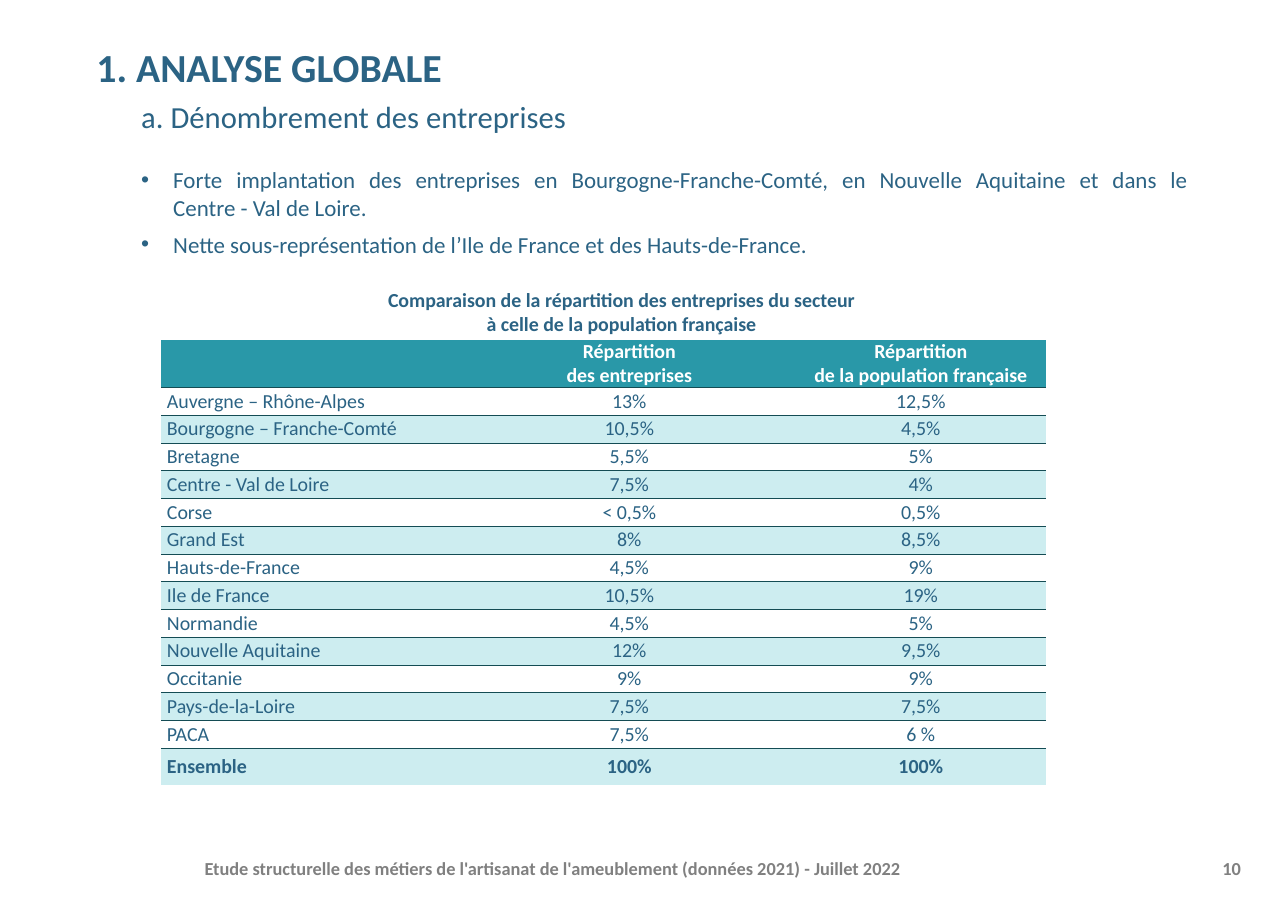
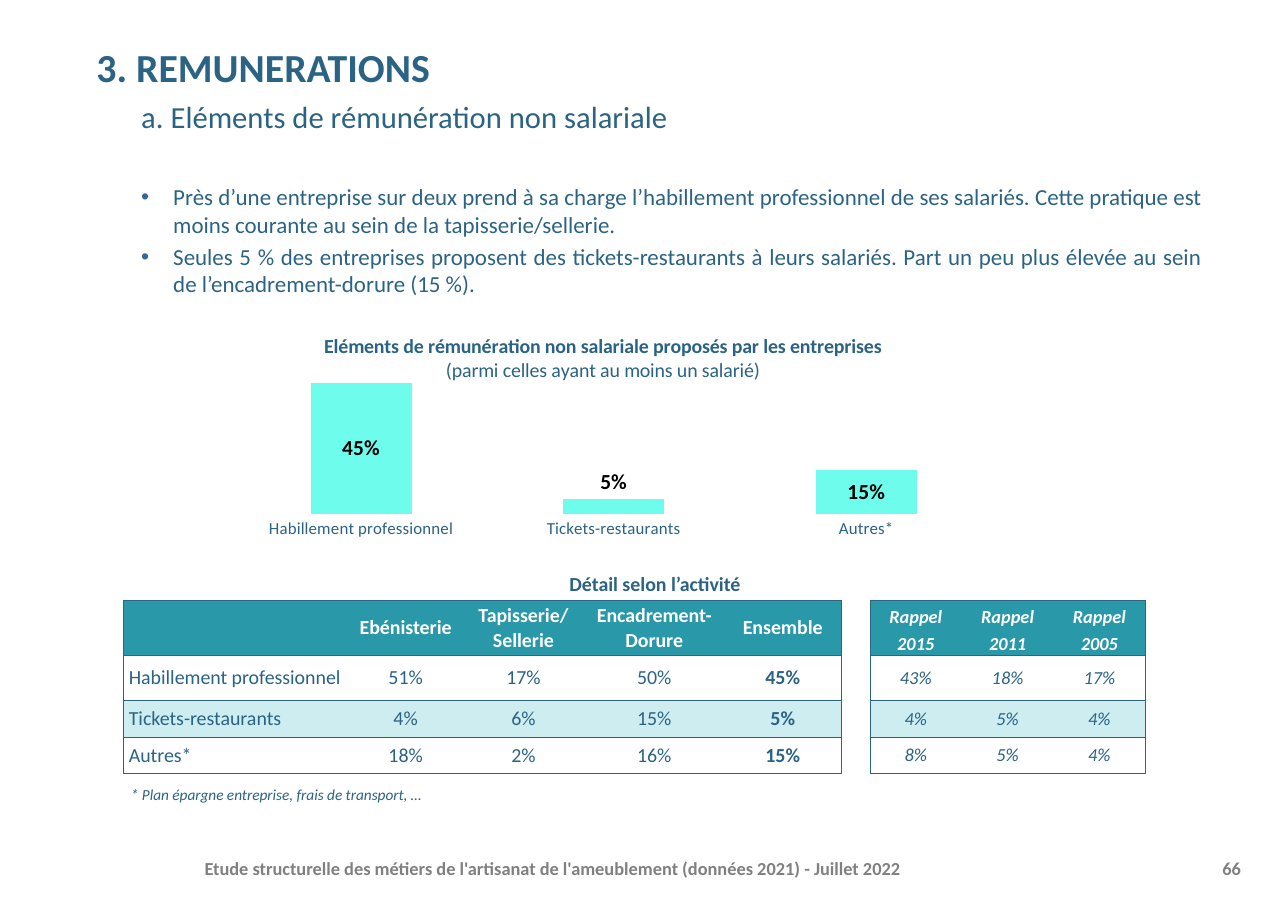
import pptx
import pptx.chart.data
import pptx.dml.color
import pptx.enum.chart
import pptx.enum.text
import pptx.oxml.ns
import pptx.util
import lxml.etree

Pt = pptx.util.Pt
qn = pptx.oxml.ns.qn
Sub = lxml.etree.SubElement
Align = pptx.enum.text.PP_ALIGN
Anchor = pptx.enum.text.MSO_ANCHOR

# Shared style
FONT = "Calibri"
BLUE, TEAL, PALE, WHITE = "2B6384", "2998A8", "CDEDF0", "FFFFFF"
GREY, DARK, AQUA, BLACK = "808080", "144C54", "6EFCED", "000000"
PLAIN = "{2D5ABB26-0587-4C30-8999-92F81FD0307C}"  # table style without grid
FOOTER = ("Etude structurelle des métiers de l'artisanat de l'ameublement "
          "(données 2021) - Juillet 2022")

# Content: regions
AREAS = {
    "head": ("1. ANALYSE GLOBALE", "a. Dénombrement des entreprises", "10"),
    "points": [
        "Forte implantation des entreprises en Bourgogne-Franche-Comté, en "
        "Nouvelle Aquitaine et dans le \nCentre - Val de Loire.",
        "Nette sous-représentation de l’Ile de France et des Hauts-de-France.",
    ],
    "caption": "Comparaison de la répartition des entreprises du secteur\n"
               "à celle de la population française",
    "rows": [
        ("", "Répartition\ndes entreprises",
         "Répartition\nde la population française"),
        ("Auvergne – Rhône-Alpes", "13%", "12,5%"),
        ("Bourgogne – Franche-Comté", "10,5%", "4,5%"),
        ("Bretagne", "5,5%", "5%"),
        ("Centre - Val de Loire", "7,5%", "4%"),
        ("Corse", "< 0,5%", "0,5%"),
        ("Grand Est", "8%", "8,5%"),
        ("Hauts-de-France", "4,5%", "9%"),
        ("Ile de France", "10,5%", "19%"),
        ("Normandie", "4,5%", "5%"),
        ("Nouvelle Aquitaine", "12%", "9,5%"),
        ("Occitanie", "9%", "9%"),
        ("Pays-de-la-Loire", "7,5%", "7,5%"),
        ("PACA", "7,5%", "6 %"),
        ("Ensemble", "100%", "100%"),
    ],
}

# Content: pay
PAY = {
    "head": ("3. REMUNERATIONS", "a. Eléments de rémunération non salariale",
             "66"),
    "points": [
        "Près d’une entreprise sur deux prend à sa charge l’habillement "
        "professionnel de ses salariés. Cette pratique est moins courante au "
        "sein de la tapisserie/sellerie.",
        "Seules 5 % des entreprises proposent des tickets-restaurants à leurs "
        "salariés. Part un peu plus élevée au sein de l’encadrement-dorure "
        "(15 %).",
    ],
    "title": ("Eléments de rémunération non salariale proposés par les "
              "entreprises", "(parmi celles ayant au moins un salarié)"),
    "shares": {"Habillement professionnel": 0.45, "Tickets-restaurants": 0.05,
               "Autres*": 0.15},
    "caption": "Détail selon l’activité",
    "rows": [
        ("", "Ebénisterie", "Tapisserie/\nSellerie", "Encadrement- Dorure",
         "Ensemble", "", "Rappel 2015", "Rappel 2011", "Rappel 2005"),
        ("Habillement professionnel", "51%", "17%", "50%", "45%", "",
         "43%", "18%", "17%"),
        ("Tickets-restaurants", "4%", "6%", "15%", "5%", "", "4%", "5%", "4%"),
        ("Autres*", "18%", "2%", "16%", "15%", "", "8%", "5%", "4%"),
    ],
    "note": "* Plan épargne entreprise, frais de transport, …",
}


def color(code):
    return pptx.dml.color.RGBColor.from_string(code)


def style(font, size, code=BLUE, bold=False, italic=False):
    font.name, font.size, font.bold, font.italic = FONT, Pt(size), bold, italic
    font.color.rgb = color(code)


def write(para, text, size, align=Align.LEFT, **look):
    """Fill a paragraph; a newline in the text is a line break."""
    para.alignment = align
    for num, line in enumerate(text.split("\n")):
        if num:
            para.add_line_break()
        run = para.add_run()
        run.text = line
        style(run.font, size, **look)


def indent(para, left, first=0):
    props = para._p.get_or_add_pPr()
    props.set("marL", str(Pt(left)))
    props.set("indent", str(Pt(first)))
    return props


def frame(slide, box, pad=(7.2, 3.6), anchor=Anchor.TOP):
    text = slide.shapes.add_textbox(*map(Pt, box)).text_frame
    text.word_wrap, text.vertical_anchor = True, anchor
    text.margin_left = text.margin_right = Pt(pad[0])
    text.margin_top = text.margin_bottom = Pt(pad[1])
    return text


def label(slide, box, text, size, align=Align.CENTER, anchor=Anchor.MIDDLE,
          **look):
    write(frame(slide, box, anchor=anchor).paragraphs[0], text, size, align,
          **look)


def start(deck, head):
    """Add a slide with its title, footer and number."""
    slide = deck.slides.add_slide(deck.slide_layouts[6])
    title, sub, number = head
    text = frame(slide, (57, 28, 728.6, 57), (0, 0))
    top, low = text.paragraphs[0], text.add_paragraph()
    indent(top, 6)
    write(top, title, 26, bold=True)
    indent(low, 35.3)
    low.space_before = Pt(5)
    write(low, sub, 20)
    look = {"code": GREY, "bold": True}
    label(slide, (126.6, 551.5, 635, 31.7), FOOTER, 12, Align.LEFT, **look)
    label(slide, (762, 551.5, 56, 31.7), number, 12, Align.RIGHT, **look)
    return slide


def bullets(slide, top, points, gap, lead=None, dot=BLUE):
    text = frame(slide, (57, top, 728.6, 405), (0, 3.6))
    for num, point in enumerate(points):
        para = text.add_paragraph() if num else text.paragraphs[0]
        props = indent(para, 56.2, -21)
        tint = Sub(props, qn("a:buClr"))
        Sub(tint, qn("a:srgbClr"), val=dot)
        Sub(props, qn("a:buFont"), typeface="Arial")
        Sub(props, qn("a:buChar"), char="•")
        if num:
            para.space_before = Pt(gap)
        if lead:
            para.line_spacing = Pt(lead)
        write(para, point, 15, Align.JUSTIFY)


def border(cell, widths, code):
    """Draw the left, right, top and bottom lines; width 0 means none."""
    props = cell._tc.get_or_add_tcPr()
    for side, width in zip("LRTB", widths):
        line = Sub(props, qn("a:ln" + side), w=str(Pt(width)))
        if width:
            fill = Sub(line, qn("a:solidFill"))
            Sub(fill, qn("a:srgbClr"), val=code)
        else:
            Sub(line, qn("a:noFill"))


def grid(slide, left, top, cols, highs, rows, across, down, code, look,
         gap=None):
    """Add a table; across and down hold the line widths between cells."""
    table = slide.shapes.add_table(
        len(rows), len(cols), Pt(left), Pt(top), Pt(sum(cols)),
        Pt(sum(highs))).table
    table._tbl.tblPr.find(qn("a:tableStyleId")).text = PLAIN
    table.first_row = table.horz_banding = False
    for col, width in zip(table.columns, cols):
        col.width = Pt(width)
    for row, high in zip(table.rows, highs):
        row.height = Pt(high)
    for r, row in enumerate(rows):
        for c, text in enumerate(row):
            cell = table.cell(r, c)
            cell.vertical_anchor = Anchor.MIDDLE
            cell.margin_left = cell.margin_right = Pt(3.6)
            cell.margin_top = cell.margin_bottom = 0
            flat = (0, 0) if c == gap else (across[r], across[r + 1])
            border(cell, (down[c], down[c + 1], *flat), code)
            if c == gap:
                cell.fill.background()
            else:
                cell.fill.solid()
                shade = PALE if r % 2 == 0 else WHITE
                cell.fill.fore_color.rgb = color(shade if r else TEAL)
            if text:
                para = cell.text_frame.paragraphs[0]
                size, bold, italic, lead = look(r, c)
                if lead:
                    para.line_spacing = Pt(lead)
                write(para, text, size, Align.CENTER if c else Align.LEFT,
                      code=BLUE if r else WHITE, bold=bold, italic=italic)


def place(node, spot, **parts):
    """Give a chart part a fixed layout."""
    for old in node.findall(qn("c:layout")):
        node.remove(old)
    layout = lxml.etree.Element(qn("c:layout"))
    manual = Sub(layout, qn("c:manualLayout"))
    for name, val in parts.items():
        Sub(manual, qn("c:" + name), val=str(val))
    node.insert(spot, layout)


def columns(slide, box, title, shares):
    enum = pptx.enum.chart
    data = pptx.chart.data.CategoryChartData(number_format="0%")
    data.categories = list(shares)
    data.add_series("Entreprises", list(shares.values()))
    chart = slide.shapes.add_chart(
        enum.XL_CHART_TYPE.COLUMN_CLUSTERED, *map(Pt, box), data).chart
    style(chart.font, 10, BLACK)
    chart.has_legend, chart.has_title = False, True

    # Title and plot area
    text = chart.chart_title.text_frame
    write(text.paragraphs[0], title[0], 13, Align.CENTER, bold=True)
    write(text.add_paragraph(), title[1], 13, Align.CENTER)
    place(chart.chart_title._element, 1, xMode="edge", yMode="edge",
          x=0.13, y=0.02)
    place(chart._chartSpace.chart.plotArea, 0, layoutTarget="inner",
          xMode="edge", yMode="edge", x=0.02, y=0.19, w=0.97, h=0.64)

    # Axes
    names, scale = chart.category_axis, chart.value_axis
    names.major_tick_mark = enum.XL_TICK_MARK.NONE
    names.format.line.fill.background()
    style(names.tick_labels.font, 11)
    scale.minimum_scale, scale.maximum_scale, scale.major_unit = 0, 0.5, 0.1
    scale.has_major_gridlines = scale.visible = False

    # Bars and labels
    plot = chart.plots[0]
    plot.gap_width, plot.overlap, plot.vary_by_categories = 150, -27, False
    bars = plot.series[0]
    bars.format.fill.solid()
    bars.format.fill.fore_color.rgb = color(AQUA)
    marks = bars.data_labels
    marks.show_value, marks.number_format = True, "0%"
    marks.number_format_is_linked = False
    marks.position = enum.XL_LABEL_POSITION.CENTER
    style(marks.font, 14, BLACK, True)
    small = bars.points[1].data_label
    style(small.font, 14, BLACK, True)
    small.position = enum.XL_LABEL_POSITION.OUTSIDE_END


def areas(deck):
    slide = start(deck, AREAS["head"])
    bullets(slide, 105, AREAS["points"], 6, lead=18)
    label(slide, (228, 184.3, 356, 39), AREAS["caption"], 13, bold=True)
    rows = AREAS["rows"]
    last = len(rows) - 1
    grid(slide, 105.5, 222, (197, 217.5, 163.5),
         [31] + [18.15] * (last - 1) + [24], rows,
         [0] + [0.5] * (last - 1) + [1, 0], [0] * 4, DARK,
         lambda r, c: (13, r in (0, last), False, None))


def pay(deck):
    slide = start(deck, PAY["head"])
    bullets(slide, 116, PAY["points"], 3, dot="336699")
    columns(slide, (143.3, 212.4, 510.5, 149), PAY["title"], PAY["shares"])
    label(slide, (78.5, 509.8, 238, 19.4), PAY["note"], 10, Align.LEFT,
          Anchor.TOP, italic=True)
    label(slide, (258, 370, 340, 23), PAY["caption"], 13, bold=True)
    total, gap = 4, 5

    def look(r, c):
        past = c > gap
        lead = 18 if past and r == 0 else None
        return 12 if past else 13, r == 0 or c == total, past, lead

    edges = (0, gap, gap + 1, 9)
    grid(slide, 80.6, 392.5, (147, 75, 79, 92, 76, 19, 60, 60, 60),
         (36, 29.2, 24.2, 23.8), PAY["rows"], [0.5] * 5,
         [0.5 if c in edges else 0 for c in range(10)], BLUE, look, gap)


def main():
    deck = pptx.Presentation()
    deck.slide_width, deck.slide_height = Pt(841.68), Pt(595.44)
    areas(deck)
    pay(deck)
    deck.save("out.pptx")


if __name__ == "__main__":
    main()
